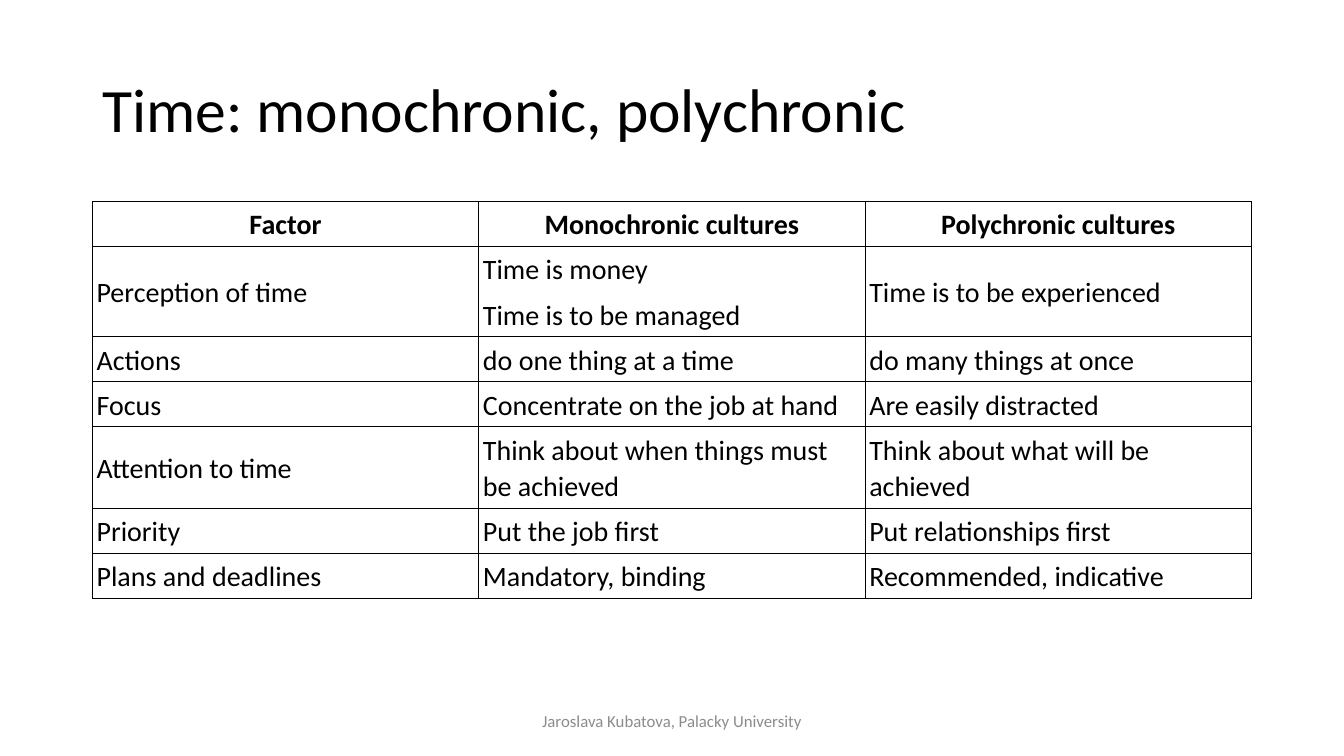
from dataclasses import dataclass

from lxml.etree import SubElement
from pptx import Presentation
from pptx.dml.color import RGBColor
from pptx.enum.text import MSO_ANCHOR, PP_ALIGN
from pptx.oxml.ns import qn
from pptx.util import Emu, Pt

SCALE = 9525  # EMU per px


@dataclass(frozen=True)
class Theme:
    font: str = "Calibri"
    ink: str = "000000"
    muted: str = "8C8C8C"
    title: int = 44
    body: int = 20
    small: int = 12
    rule: int = 1


@dataclass(frozen=True)
class Box:
    left: int
    top: int
    width: int
    height: int

    def emu(self) -> tuple[Emu, Emu, Emu, Emu]:
        return px(self.left), px(self.top), px(self.width), px(self.height)


@dataclass(frozen=True)
class Row:
    factor: str
    mono: str
    poly: str
    head: bool = False

    def texts(self) -> tuple[str, str, str]:
        return self.factor, self.mono, self.poly


THEME = Theme()
SLIDE = Box(0, 0, 1280, 720)
TITLE = Box(88, 38, 1104, 139)
FOOTER = Box(424, 667, 432, 38)
COL, LINE, INSET = 368, 39, 4

ROWS = [
    Row("Factor", "Monochronic cultures", "Polychronic cultures", head=True),
    Row("Perception of time", "Time is money\nTime is to be managed",
        "Time is to be experienced"),
    Row("Actions", "do one thing at a time", "do many things at once"),
    Row("Focus", "Concentrate on the job at hand", "Are easily distracted"),
    Row("Attention to time", "Think about when things must be achieved",
        "Think about what will be achieved"),
    Row("Priority", "Put the job first", "Put relationships first"),
    Row("Plans and deadlines", "Mandatory, binding", "Recommended, indicative"),
]
GRID = Box(88, 192, 3 * COL, len(ROWS) * LINE)


def px(count: int) -> Emu:
    return Emu(count * SCALE)


def style(frame, size: int, color: str, align=PP_ALIGN.LEFT,
          bold: bool = False, leading: float = 1.0, after: int = 0) -> None:
    """Format every paragraph of a text frame alike."""
    for para in frame.paragraphs:
        para.alignment = align
        para.line_spacing = leading
        para.space_after = Pt(after)
        font = para.font
        font.name, font.size, font.bold = THEME.font, Pt(size), bold
        font.color.rgb = RGBColor.from_string(color)


def border(cell) -> None:
    props = cell._tc.get_or_add_tcPr()
    for side in ("lnL", "lnR", "lnT", "lnB"):
        line = SubElement(props, qn(f"a:{side}"), w=str(Pt(THEME.rule)))
        fill = SubElement(line, qn("a:solidFill"))
        SubElement(fill, qn("a:srgbClr"), val=THEME.ink)


def fill_cell(cell, text: str, head: bool) -> None:
    cell.text = text
    cell.vertical_anchor = MSO_ANCHOR.MIDDLE
    cell.margin_left = cell.margin_right = px(INSET)
    cell.margin_top = cell.margin_bottom = px(INSET)
    align = PP_ALIGN.CENTER if head else PP_ALIGN.LEFT
    style(cell.text_frame, THEME.body, THEME.ink, align, head, 1.07, 6)
    border(cell)
    cell.fill.background()


def add_title(slide, text: str) -> None:
    title = slide.shapes.title
    title.left, title.top, title.width, title.height = TITLE.emu()
    frame = title.text_frame
    frame.text = text
    frame.vertical_anchor = MSO_ANCHOR.MIDDLE
    style(frame, THEME.title, THEME.ink, leading=0.9)


def add_grid(slide, rows: list[Row]) -> None:
    table = slide.shapes.add_table(len(rows), 3, *GRID.emu()).table
    table.first_row = table.horz_banding = False
    for line, row in zip(table.rows, rows):
        line.height = px(LINE)
        for cell, text in zip(line.cells, row.texts()):
            fill_cell(cell, text, row.head)


def add_footer(slide, text: str) -> None:
    frame = slide.shapes.add_textbox(*FOOTER.emu()).text_frame
    frame.word_wrap = True
    frame.text = text
    frame.vertical_anchor = MSO_ANCHOR.MIDDLE
    style(frame, THEME.small, THEME.muted, PP_ALIGN.CENTER)


def main() -> None:
    deck = Presentation()
    deck.slide_width, deck.slide_height = px(SLIDE.width), px(SLIDE.height)
    slide = deck.slides.add_slide(deck.slide_layouts.get_by_name("Title Only"))
    add_title(slide, "Time: monochronic, polychronic")
    add_grid(slide, ROWS)
    add_footer(slide, "Jaroslava Kubatova, Palacky University")
    deck.save("out.pptx")


if __name__ == "__main__":
    main()
